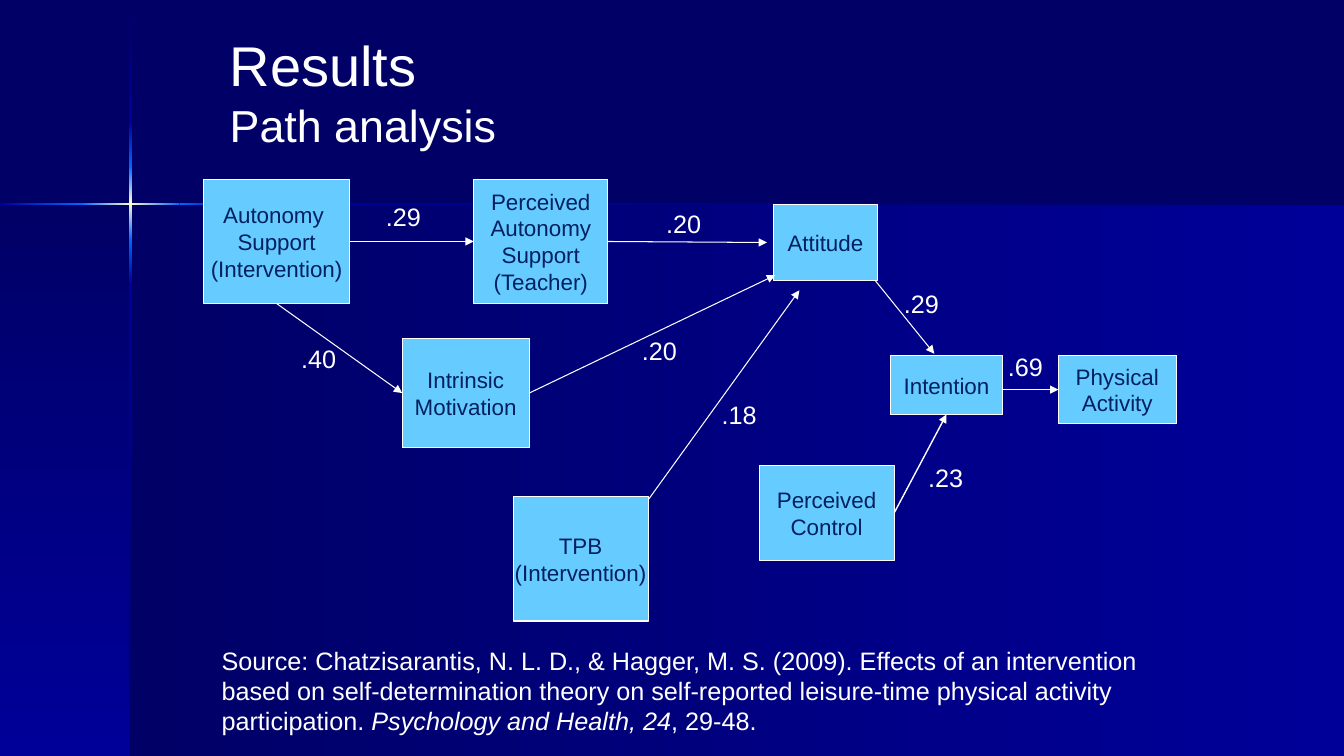
from copy import deepcopy

from pptx import Presentation
from pptx.dml.color import RGBColor
from pptx.enum import shapes, text
from pptx.oxml import ns, xmlchemy
from pptx.util import Pt

NAVY = RGBColor(0x00, 0x00, 0x66)
BLUE = RGBColor(0x00, 0x00, 0x99)
GLOW = RGBColor(0x00, 0x66, 0xFF)
CREAM = RGBColor(0xFF, 0xFF, 0xCC)
WHITE = RGBColor(0xFF, 0xFF, 0xFF)
SKY = RGBColor(0x66, 0xCC, 0xFF)
INK = RGBColor(0x00, 0x20, 0x60)
FONT = "Arial"
WIDE, HIGH = 960, 540


def write(frame, lines, size=18, color=WHITE, align=None,
          anchor=text.MSO_ANCHOR.TOP, wrap=False, grow=False):
    """Each line is a list of runs: (words, size or None, italic)."""
    frame.word_wrap = wrap
    frame.vertical_anchor = anchor
    fit = text.MSO_AUTO_SIZE
    frame.auto_size = fit.SHAPE_TO_FIT_TEXT if grow else fit.NONE
    for i, line in enumerate(lines):
        para = frame.add_paragraph() if i else frame.paragraphs[0]
        para.alignment = align
        for words, own, slant in line:
            run = para.add_run()
            run.text = words.rstrip("\n")
            run.font.name = FONT
            run.font.size = Pt(own or size)
            run.font.italic = slant
            run.font.color.rgb = color
            if words.endswith("\n"):
                para.add_line_break()


def plain(*lines):
    return [[(line, None, None)] for line in lines]


def label(slide, box, lines, **form):
    area = slide.shapes.add_textbox(*map(Pt, box))
    write(area.text_frame, lines, **form)


def blend(slide, box, colors, down=False):
    """Draw a rectangular outline with evenly spaced gradient stops."""
    x, y, w, h = box
    pen = slide.shapes.build_freeform(Pt(x), Pt(y))
    pen.add_line_segments([(Pt(a), Pt(b)) for a, b in
                           ((x + w, y), (x + w, y + h), (x, y + h))])
    part = pen.convert_to_shape()
    part.shadow.inherit = False
    part.line.fill.background()
    part.fill.gradient()
    part.fill.gradient_angle = 270 if down else 0
    stops = part.fill.gradient_stops
    if len(colors) > 2:
        group = part._element.spPr.find(".//" + ns.qn("a:gsLst"))
        group.append(deepcopy(group[-1]))
        stops = part.fill.gradient_stops
    for i, (stop, color) in enumerate(zip(stops, colors)):
        stop.color.rgb = color
        stop.position = i / (len(colors) - 1)


def backdrop(slide, box, cross):
    """Two panels and a glowing cross centred on the given point."""
    x, y, w, h = box
    cx, cy = cross
    slide.background.fill.solid()
    slide.background.fill.fore_color.rgb = NAVY
    blend(slide, (cx, cy, x + w - cx, y + h - cy), (NAVY, BLUE))
    blend(slide, (x, cy, cx - x, y + h - cy), (NAVY, BLUE), down=True)

    # Arms of the cross, from one edge through the bright core to the other
    shades = ((NAVY, BLUE), (BLUE, GLOW), (GLOW, CREAM, GLOW),
              (GLOW, BLUE), (BLUE, NAVY))
    rows = (y, 87.1, 118.8, 171.4, 203, y + h)
    for a, b, shade in zip(rows, rows[1:], shades):
        blend(slide, (cx - 1, a, 2, b - a), shade, down=True)
    cols = (x, 58.3, 128.2, 169.9, x + w)
    for a, b, shade in zip(cols, cols[1:], shades[1:]):
        blend(slide, (a, cy - 0.7, b - a, 1.4), shade)


def heading(slide, box):
    label(slide, box, [[("Results\n", 40, None), ("Path analysis", 32, None)]],
          anchor=text.MSO_ANCHOR.MIDDLE, wrap=True)


def node(slide, box, lines):
    rect = slide.shapes.add_shape(shapes.MSO_SHAPE.RECTANGLE, *map(Pt, box))
    rect.shadow.inherit = False
    rect.fill.solid()
    rect.fill.fore_color.rgb = SKY
    rect.line.color.rgb = WHITE
    rect.line.width = Pt(0.75)
    write(rect.text_frame, plain(*lines), size=16, color=INK,
          align=text.PP_ALIGN.CENTER, anchor=text.MSO_ANCHOR.MIDDLE)
    return rect


def arrow(slide, start, end, nodes, x, y, width=0.75):
    """An end is a point, or a (node name, side) pair to join."""
    def spot(tip):
        return (0, 0) if isinstance(tip[0], str) else (Pt(x + tip[0]), Pt(y + tip[1]))

    line = slide.shapes.add_connector(
        shapes.MSO_CONNECTOR.STRAIGHT, *spot(start), *spot(end))
    for tip, join in ((start, line.begin_connect), (end, line.end_connect)):
        if isinstance(tip[0], str):
            join(nodes[tip[0]], tip[1])
    line.line.color.rgb = WHITE
    line.line.width = Pt(width)
    stroke = line.line._get_or_add_ln()
    stroke.append(xmlchemy.OxmlElement("a:tailEnd"))
    stroke[-1].set("type", "triangle")
    line._element.spPr.append(xmlchemy.OxmlElement("a:effectLst"))


def model(slide, box):
    """Path diagram; all places are offsets within the box."""
    x, y = box[:2]

    # Variables
    parts = {
        "support": ((0, 0, 104.4, 88.6), ("Autonomy ", "Support", "(Intervention)")),
        "teacher": ((193, 0, 95.8, 88.6),
                    ("Perceived", "Autonomy", "Support", "(Teacher)")),
        "motive": ((141.9, 113.7, 90.7, 77.8), ("Intrinsic", "Motivation")),
        "view": ((406.8, 18, 74.9, 54), ("Attitude",)),
        "aim": ((490.4, 126, 80.6, 41.8), ("Intention",)),
        "active": ((610.6, 126, 84.2, 48.2), ("Physical", "Activity")),
        "tpb": ((221.1, 226.8, 96.5, 88.6), ("TPB", "(Intervention)")),
        "control": ((396.8, 204.4, 96.5, 67.7), ("Perceived", "Control")),
    }
    nodes = {name: node(slide, (x + left, y + top, w, h), lines)
             for name, ((left, top, w, h), lines) in parts.items()}

    # Paths: start, end, weight, place of the weight, line width
    paths = (
        (("support", 3), ("teacher", 1), ".29", (123.2, 12.2), 0.75),
        (("support", 2), ("motive", 1), ".40", (62.7, 113.7), 0.75),
        (("teacher", 3), (402.5, 45), ".20", (323.3, 17.2), 0.75),
        (("motive", 3), (408.3, 68.4), ".20", (306, 108), 0.75),
        ((317.6, 228.9), (425.6, 79.2), ".18", (362.9, 153.3), 0.75),
        ((479.6, 72), (522, 124.5), ".29", (493.2, 74.1), 0.75),
        (("control", 3), ("aim", 2), ".23", (510.5, 198.7), 1),
        ((571, 150.1), ("active", 1), ".69", (567.4, 119.5), 0.75),
    )
    for start, end, weight, (left, top), width in paths:
        arrow(slide, start, end, nodes, x, y, width)
        label(slide, (x + left, y + top, 39.6, 28.8), plain(weight), grow=True)


def source(slide, box):
    lines = plain(
        "Source: Chatzisarantis, N. L. D., & Hagger, M. S. (2009). Effects of an intervention",
        "based on self-determination theory on self-reported leisure-time physical activity")
    lines.append([("participation. ", None, None),
                  ("Psychology and Health, 24", None, True),
                  (", 29-48.", None, False)])
    label(slide, box, lines, grow=True)


def main():
    deck = Presentation()
    deck.slide_width, deck.slide_height = Pt(WIDE), Pt(HIGH)
    slide = deck.slides.add_slide(deck.slide_layouts[6])
    backdrop(slide, (0, 0, WIDE, HIGH), (93.2, 145.4))
    heading(slide, (157, 25.9, 646.6, 78.5))
    model(slide, (145.4, 128.2, 694.8, 315.4))
    source(slide, (151.2, 457.2, 669.6, 72))
    deck.save("out.pptx")


if __name__ == "__main__":
    main()
